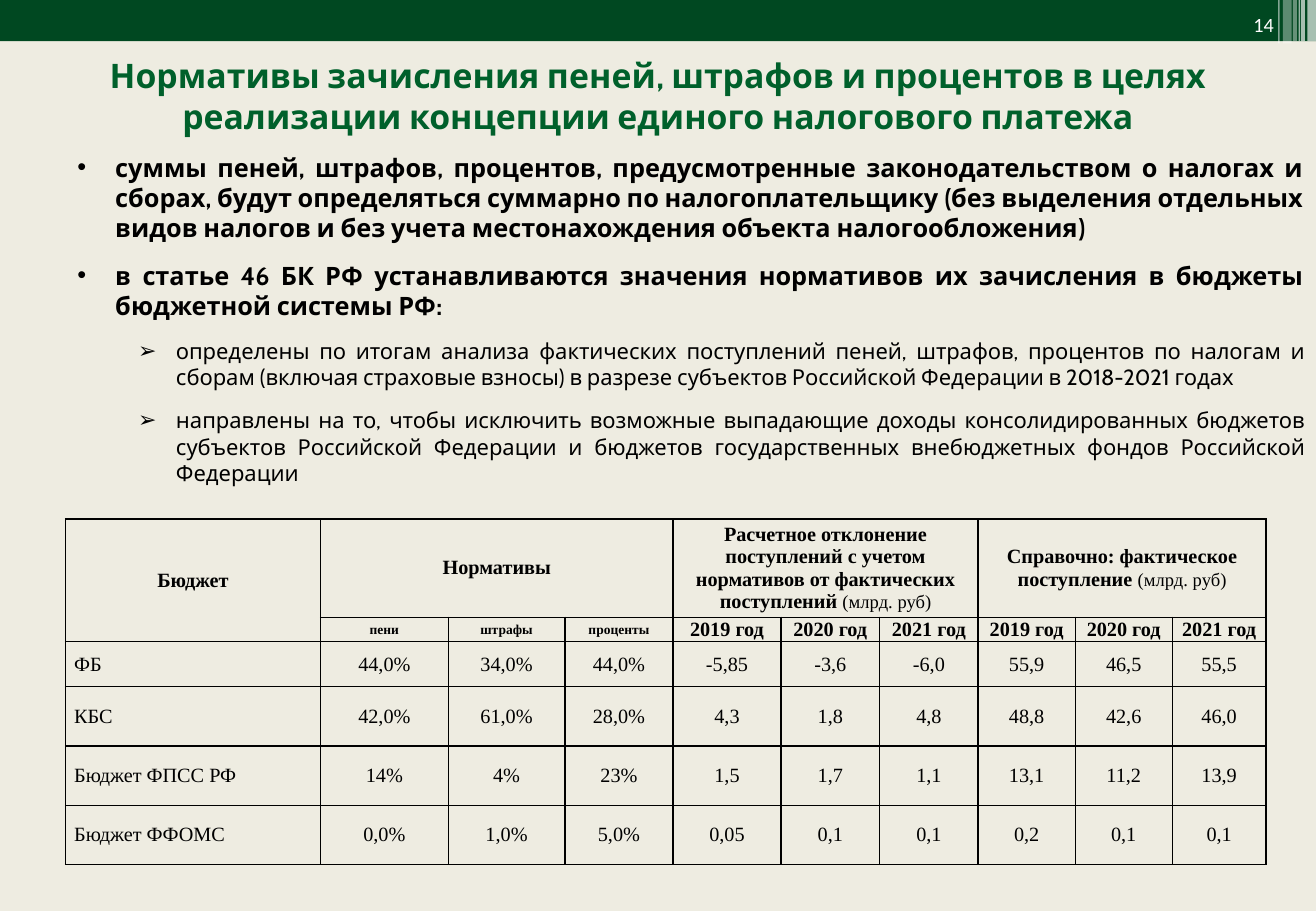
import pptx
import pptx.dml.color
import pptx.enum.shapes
import pptx.enum.text
import pptx.oxml
import pptx.oxml.ns
import pptx.util
from lxml import etree

Cm = pptx.util.Cm
Pt = pptx.util.Pt
ALIGN = pptx.enum.text.PP_ALIGN
ANCHOR = pptx.enum.text.MSO_ANCHOR
SERIF = "Times New Roman"


def color(value):
    return pptx.dml.color.RGBColor.from_string(value)


def add_element(parent, tag, **attributes):
    return etree.SubElement(parent, pptx.oxml.ns.qn(tag), attributes)


class BudgetSlide:
    heading_font = "Cabin"
    dark_green = "004821"
    title_green = "00602B"
    black = "000000"
    white = "FFFFFF"

    def __init__(self, presentation):
        self.slide = presentation.slides.add_slide(presentation.slide_layouts[5])
        self.slide.background.fill.solid()
        self.slide.background.fill.fore_color.rgb = color("EEECE1")

    def style(self, font, name, size, value, bold=False):
        font.name = name
        font.size = Pt(size)
        font.bold = bold
        font.color.rgb = color(value)

    def title(self, text, left, top, width, height):
        shape = self.slide.shapes.title
        shape.left, shape.top, shape.width, shape.height = map(Cm, (left, top, width, height))
        frame = shape.text_frame
        frame.text = text
        frame.word_wrap = True
        frame.auto_size = pptx.enum.text.MSO_AUTO_SIZE.NONE
        frame.vertical_anchor = ANCHOR.TOP
        paragraph = frame.paragraphs[0]
        paragraph.alignment = ALIGN.CENTER
        self.style(paragraph.font, self.heading_font, 20, self.title_green, True)

    def bar(self, left, width, height, fill, opacity=100):
        shape = self.slide.shapes.add_shape(
            pptx.enum.shapes.MSO_SHAPE.RECTANGLE, Cm(left), 0, Cm(width), Cm(height))
        shape.shadow.inherit = False
        shape.line.fill.background()
        shape.fill.solid()
        shape.fill.fore_color.rgb = color(fill)
        if opacity < 100:
            rgb = shape.fill._xPr.find(".//" + pptx.oxml.ns.qn("a:srgbClr"))
            add_element(rgb, "a:alpha", val=str(opacity * 1000))

    def text_box(self, left, top, width, height):
        shape = self.slide.shapes.add_textbox(*map(Cm, (left, top, width, height)))
        shape.text_frame.word_wrap = True
        return shape.text_frame

    def page_number(self, text, left, top, width, height):
        frame = self.text_box(left, top, width, height)
        frame.vertical_anchor = ANCHOR.MIDDLE
        paragraph = frame.paragraphs[0]
        paragraph.text = text
        paragraph.alignment = ALIGN.RIGHT
        self.style(paragraph.font, "Calibri", 12, self.white)

    def bullets(self, items, left, top, width, height):
        frame = self.text_box(left, top, width, height)
        for index, (level, text) in enumerate(items):
            paragraph = frame.paragraphs[0] if index == 0 else frame.add_paragraph()
            paragraph.text = text
            paragraph.level = level
            paragraph.alignment = ALIGN.JUSTIFY
            properties = paragraph._p.get_or_add_pPr()
            properties.set("marL", str(Cm((0.79, 2.06)[level])))
            properties.set("indent", str(Cm(-0.79)))
            add_element(properties, "a:buFont", typeface="Arial")
            add_element(properties, "a:buChar", char="•➢"[level])
            if index:
                paragraph.space_before = Pt(10)
            self.style(paragraph.font, self.heading_font, (15, 13)[level], self.black, level == 0)

    def cell(self, cell, text, note="", size=12, bold=False, align=ALIGN.CENTER):
        cell.fill.background()
        cell.vertical_anchor = ANCHOR.MIDDLE
        cell.margin_left = cell.margin_right = Cm(0.18)
        cell.margin_top = cell.margin_bottom = 0
        paragraph = cell.text_frame.paragraphs[0]
        paragraph.alignment = align
        if note:
            for part, part_size, part_bold in ((text + " ", size, bold), (note, 11, False)):
                run = paragraph.add_run()
                run.text = part
                self.style(run.font, SERIF, part_size, self.black, part_bold)
        else:
            paragraph.text = text
            self.style(paragraph.font, SERIF, size, self.black, bold)

    def borders(self, cell):
        properties = cell._tc.get_or_add_tcPr()
        for index, side in enumerate(("a:lnL", "a:lnR", "a:lnT", "a:lnB")):
            line = pptx.oxml.parse_xml(
                f'<{side} {pptx.oxml.ns.nsdecls("a")} w="{Pt(1)}"><a:solidFill>'
                f'<a:srgbClr val="{self.black}"/></a:solidFill></{side}>')
            properties.insert(index, line)

    def table(self, groups, subheads, rows, widths, heights, left, top):
        table = self.slide.shapes.add_table(
            len(heights), len(widths), Cm(left), Cm(top),
            Cm(sum(widths)), Cm(sum(heights))).table
        table.first_row = table.horz_banding = False
        for column, width in zip(table.columns, widths):
            column.width = Cm(width)
        for row, height in zip(table.rows, heights):
            row.height = Cm(height)
        # Two header rows
        table.cell(0, 0).merge(table.cell(1, 0))
        self.cell(table.cell(0, 0), "Бюджет", bold=True)
        for index, (text, note) in enumerate(groups):
            first = 1 + 3 * index
            table.cell(0, first).merge(table.cell(0, first + 2))
            self.cell(table.cell(0, first), text, note, bold=True)
        for column, text in enumerate(subheads, 1):
            self.cell(table.cell(1, column), text, size=8 if column < 4 else 12, bold=True)
        # Budget rows
        for row, values in enumerate(rows, 2):
            for column, text in enumerate(values):
                self.cell(table.cell(row, column), text,
                          align=ALIGN.CENTER if column else ALIGN.LEFT)
        for cell in table.iter_cells():
            self.borders(cell)


STRIPES = [  # left, width, height, opacity
    (27.33, 0.18, 0.86, 65), (27.2, 0.08, 0.86, 65), (27.15, 0.03, 0.86, 60),
    (27.03, 0.08, 0.86, 40), (26.82, 0.18, 0.91, 36), (26.72, 0.03, 0.91, 51),
]
BULLETS = [
    (0, "суммы пеней, штрафов, процентов, предусмотренные законодательством о налогах и сборах, "
        "будут определяться суммарно по налогоплательщику (без выделения отдельных видов налогов "
        "и без учета местонахождения объекта налогообложения)"),
    (0, "в статье 46 БК РФ устанавливаются значения нормативов их зачисления в бюджеты "
        "бюджетной системы РФ:"),
    (1, "определены по итогам анализа фактических поступлений пеней, штрафов, процентов по налогам "
        "и сборам (включая страховые взносы) в разрезе субъектов Российской Федерации "
        "в 2018-2021 годах"),
    (1, "направлены на то, чтобы исключить возможные выпадающие доходы консолидированных бюджетов "
        "субъектов Российской Федерации и бюджетов государственных внебюджетных фондов "
        "Российской Федерации"),
]
GROUPS = [
    ("Нормативы", ""),
    ("Расчетное отклонение поступлений с учетом нормативов от фактических поступлений",
     "(млрд. руб)"),
    ("Справочно: фактическое поступление", "(млрд. руб)"),
]
SUBHEADS = ["пени", "штрафы", "проценты"] + ["2019 год", "2020 год", "2021 год"] * 2
ROWS = [
    ("ФБ", "44,0%", "34,0%", "44,0%", "-5,85", "-3,6", "-6,0", "55,9", "46,5", "55,5"),
    ("КБС", "42,0%", "61,0%", "28,0%", "4,3", "1,8", "4,8", "48,8", "42,6", "46,0"),
    ("Бюджет ФПСС РФ", "14%", "4%", "23%", "1,5", "1,7", "1,1", "13,1", "11,2", "13,9"),
    ("Бюджет ФФОМС", "0,0%", "1,0%", "5,0%", "0,05", "0,1", "0,1", "0,2", "0,1", "0,1"),
]
COLUMN_WIDTHS = [5.33, 2.67, 2.44, 2.26, 2.26, 2.06, 2.06, 2.03, 2.03, 1.96]
ROW_HEIGHTS = [2.06, 0.51, 0.94, 1.24, 1.24, 1.24]


def main():
    presentation = pptx.Presentation()
    presentation.slide_width, presentation.slide_height = Cm(27.51), Cm(19.05)
    page = BudgetSlide(presentation)

    # Header band with stripes
    page.bar(0, 27.51, 0.86, page.dark_green)
    for left, width, height, opacity in STRIPES:
        page.bar(left, width, height, page.white, opacity)
    page.page_number("14", 24.59, 0, 2.29, 1.02)

    # Title and statements
    page.title("Нормативы зачисления пеней, штрафов и процентов в целях реализации "
               "концепции единого налогового платежа", 0, 1.02, 27.51, 1.96)
    page.bullets(BULLETS, 1.37, 3.05, 26.14, 7.29)

    # Table of rates and receipts
    page.table(GROUPS, SUBHEADS, ROWS, COLUMN_WIDTHS, ROW_HEIGHTS, 1.37, 10.85)
    presentation.save("out.pptx")


if __name__ == "__main__":
    main()
